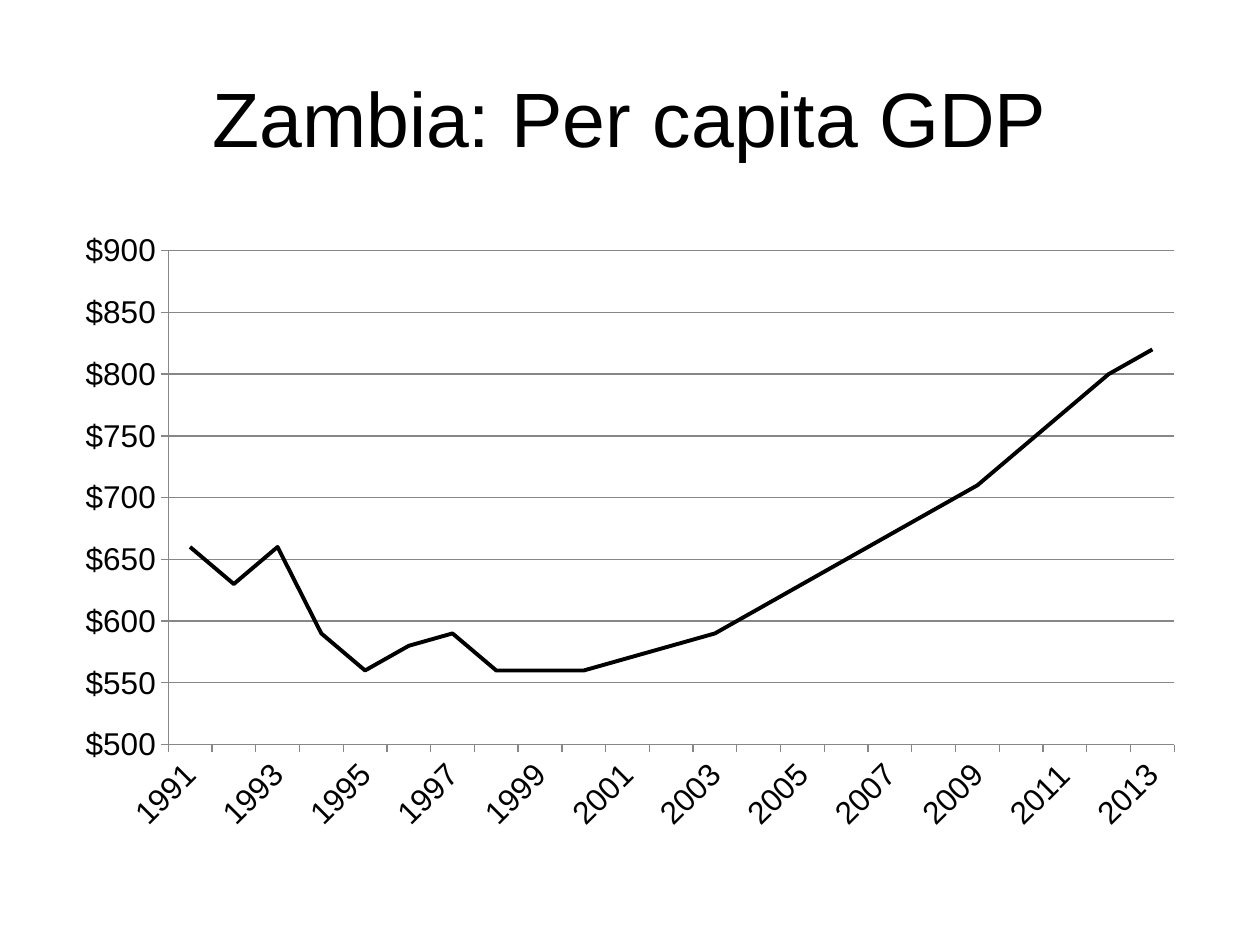
from lxml import etree
from pptx import Presentation
from pptx.chart.data import CategoryChartData
from pptx.dml.color import RGBColor
from pptx.enum.chart import XL_CHART_TYPE, XL_TICK_MARK
from pptx.enum.text import MSO_ANCHOR, PP_ALIGN
from pptx.oxml.ns import qn
from pptx.util import Inches, Pt

LINE = XL_CHART_TYPE.LINE
OUTSIDE = XL_TICK_MARK.OUTSIDE
MIDDLE = MSO_ANCHOR.MIDDLE
CENTER = PP_ALIGN.CENTER
FONT = "Arial"
COLORS = {"text": "000000", "series": "000000", "axis": "878787"}
YEARS = [str(year) for year in range(1991, 2014)]
GDP = [660, 630, 660, 590, 560, 580, 590, 560, 560, 560, 570, 580,
       590, 610, 630, 650, 670, 690, 710, 740, 770, 800, 820]


def rgb(name):
    """Return a named colour."""
    return RGBColor.from_string(COLORS[name])


def style_font(font, size, color="text"):
    """Set the face, size and colour of a font."""
    font.name, font.size = FONT, Pt(size)
    font.color.rgb = rgb(color)


def style_line(line, color, width):
    """Set the colour and width of a line."""
    line.color.rgb = rgb(color)
    line.width = Pt(width)


def add_text(s, text, left, top, width, height, size=18, align=CENTER, anchor=MIDDLE):
    """Add a wrapped text box."""
    box = s.shapes.add_textbox(Inches(left), Inches(top), Inches(width), Inches(height))
    tf = box.text_frame
    tf.word_wrap = True
    tf.vertical_anchor = anchor
    p = tf.paragraphs[0]
    p.alignment = align
    r = p.add_run()
    r.text = text
    style_font(r.font, size)


def slant_year_labels(axis):
    """Show every second year label, turned by 45 degrees."""
    cat_ax = axis._element
    cat_ax.find(qn("c:txPr")).find(qn("a:bodyPr")).set("rot", "-2700000")
    skip = etree.Element(qn("c:tickLblSkip"))
    skip.set("val", "2")
    cat_ax.find(qn("c:noMultiLvlLbl")).addprevious(skip)


def add_gdp_chart(s, left, top, width, height):
    """Add the line chart of GDP per person by year."""
    data = CategoryChartData()
    data.categories = YEARS
    data.add_series("Series 1", GDP)
    chart = s.shapes.add_chart(LINE, Inches(left), Inches(top), Inches(width),
                               Inches(height), data).chart
    chart.has_title = chart.has_legend = False
    style_font(chart.font, 18)
    years, dollars = chart.category_axis, chart.value_axis
    for axis in (years, dollars):
        axis.major_tick_mark = OUTSIDE
        style_line(axis.format.line, "axis", 0.75)
        style_font(axis.tick_labels.font, 18)
    dollars.minimum_scale, dollars.maximum_scale, dollars.major_unit = 500, 900, 50
    dollars.tick_labels.number_format = "\\$#,##0"
    dollars.tick_labels.number_format_is_linked = False
    dollars.has_major_gridlines = True
    style_line(dollars.major_gridlines.format.line, "axis", 0.75)
    chart.plots[0].vary_by_categories = False
    series = chart.plots[0].series[0]
    series.smooth = False
    style_line(series.format.line, "series", 2.25)
    slant_year_labels(years)


def main():
    """Build and save the slide."""
    prs = Presentation()
    prs.slide_width, prs.slide_height = Inches(10), Inches(7.5)
    s = prs.slides.add_slide(prs.slide_layouts[6])
    add_text(s, "Zambia: Per capita GDP", 0.5, 0.3, 9, 1.25, size=44)
    add_gdp_chart(s, 0.5, 1.75, 9, 4.95)
    prs.save("out.pptx")


if __name__ == "__main__":
    main()
